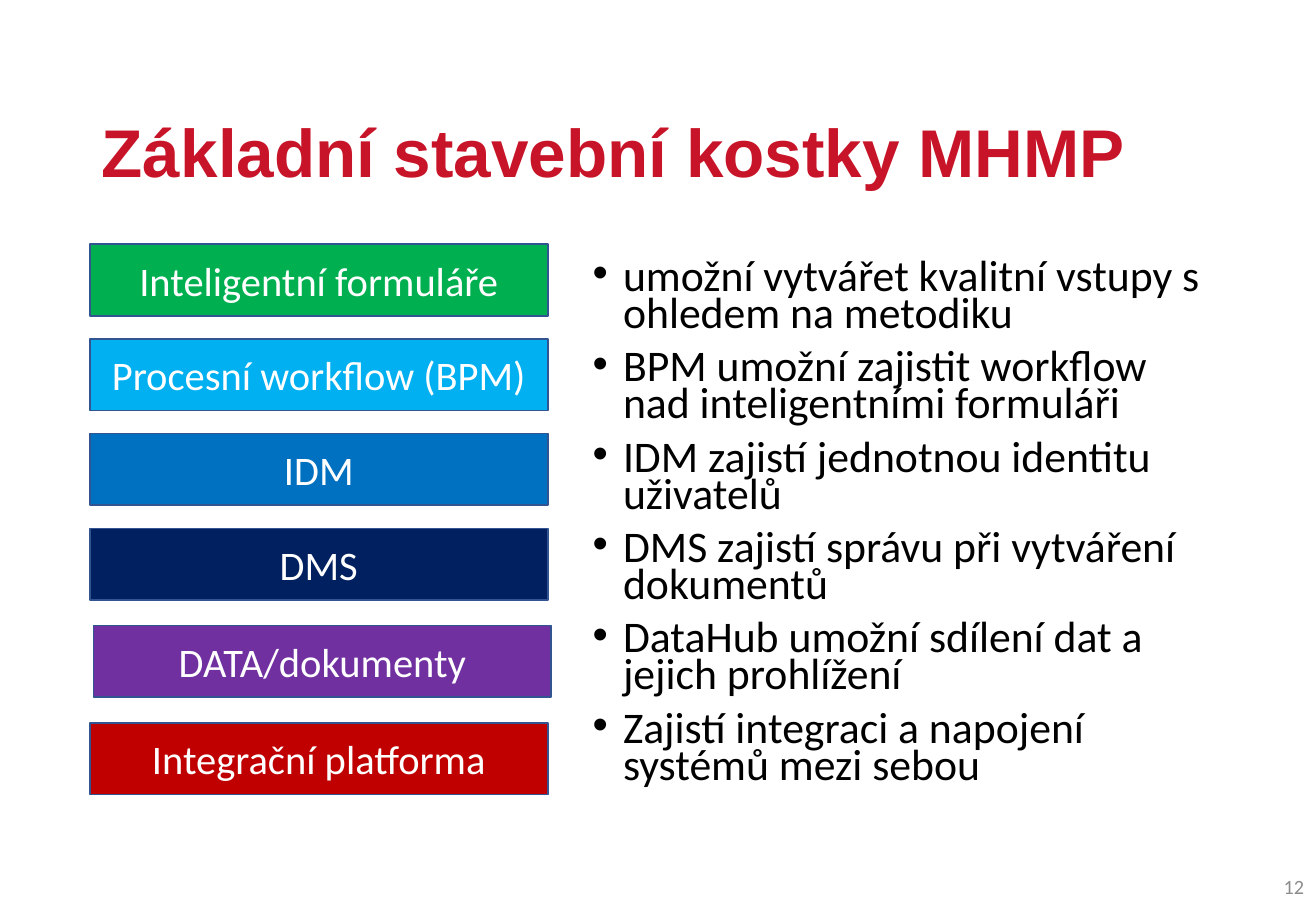
from lxml.etree import SubElement
from pptx import Presentation
from pptx.dml.color import RGBColor
from pptx.enum.shapes import MSO_SHAPE
from pptx.enum.text import MSO_ANCHOR, PP_ALIGN
from pptx.oxml.ns import qn
from pptx.util import Pt

COLORS = {
    "title": "C81428", "body": "000000", "number": "8C8C8C",
    "label": "FFFFFF", "outline": "325491",
    "green": "00B050", "sky": "00B0F0", "blue": "0070C0",
    "navy": "002060", "purple": "7030A0", "red": "C00000",
}

# label, fill, left, top
BLOCKS = [
    ("Inteligentní formuláře", "green", 53.3, 144.7),
    ("Procesní workflow (BPM)", "sky", 53.3, 200.9),
    ("IDM", "blue", 53.3, 257),
    ("DMS", "navy", 53.3, 313.2),
    ("DATA/dokumenty", "purple", 55.4, 370.8),
    ("Integrační platforma", "red", 53.3, 428.4),
]

BENEFITS = [
    "umožní vytvářet kvalitní vstupy s ohledem na metodiku",
    "BPM umožní zajistit workflow nad inteligentními formuláři",
    "IDM zajistí jednotnou identitu uživatelů",
    "DMS zajistí správu při vytváření dokumentů",
    "DataHub umožní sdílení dat a jejich prohlížení",
    "Zajistí integraci a napojení systémů mezi sebou",
]


def write_text(shape, lines, size, color, font="Calibri", bold=False, bullet=False,
               align=PP_ALIGN.LEFT, anchor=MSO_ANCHOR.MIDDLE, line_spacing=1.0, space_before=0):
    """Fill a shape with one paragraph per line, all in the same format."""
    frame = shape.text_frame
    frame.word_wrap = True
    frame.vertical_anchor = anchor
    for index, line in enumerate(lines):
        paragraph = frame.add_paragraph() if index else frame.paragraphs[0]
        paragraph.alignment = align
        paragraph.line_spacing = line_spacing
        paragraph.space_before = Pt(space_before if index else 0)
        if bullet:
            properties = paragraph._p.get_or_add_pPr()
            properties.set("marL", str(Pt(18)))
            properties.set("indent", str(-Pt(18)))
            SubElement(properties, qn("a:buFont"), typeface="Arial")
            SubElement(properties, qn("a:buChar"), char="•")
        run = paragraph.add_run()
        run.text = line
        run.font.name = font
        run.font.size = Pt(size)
        run.font.bold = bold
        run.font.color.rgb = RGBColor.from_string(COLORS[color])


presentation = Presentation()
presentation.slide_width = Pt(780)
presentation.slide_height = Pt(540)
slide = presentation.slides.add_slide(presentation.slide_layouts[6])

title = slide.shapes.add_textbox(Pt(53.3), Pt(40.3), Pt(672.5), Pt(104.4))
write_text(title, ["Základní stavební kostky MHMP"], 40, "title",
           font="Arial", bold=True, line_spacing=0.9)

benefits = slide.shapes.add_textbox(Pt(344.2), Pt(151.9), Pt(381.6), Pt(339.8))
write_text(benefits, BENEFITS, 25.9, "body", bullet=True, anchor=MSO_ANCHOR.TOP,
           line_spacing=0.7, space_before=10)

number = slide.shapes.add_textbox(Pt(604.5), Pt(511.2), Pt(175.5), Pt(28.8))
write_text(number, ["12"], 12, "number", align=PP_ALIGN.RIGHT)

for label, fill, left, top in BLOCKS:
    block = slide.shapes.add_shape(MSO_SHAPE.RECTANGLE, Pt(left), Pt(top), Pt(271.4), Pt(42.5))
    block.shadow.inherit = False
    block.fill.solid()
    block.fill.fore_color.rgb = RGBColor.from_string(COLORS[fill])
    block.line.color.rgb = RGBColor.from_string(COLORS["outline"])
    block.line.width = Pt(1)
    write_text(block, [label], 24, "label", align=PP_ALIGN.CENTER)

presentation.save("out.pptx")
